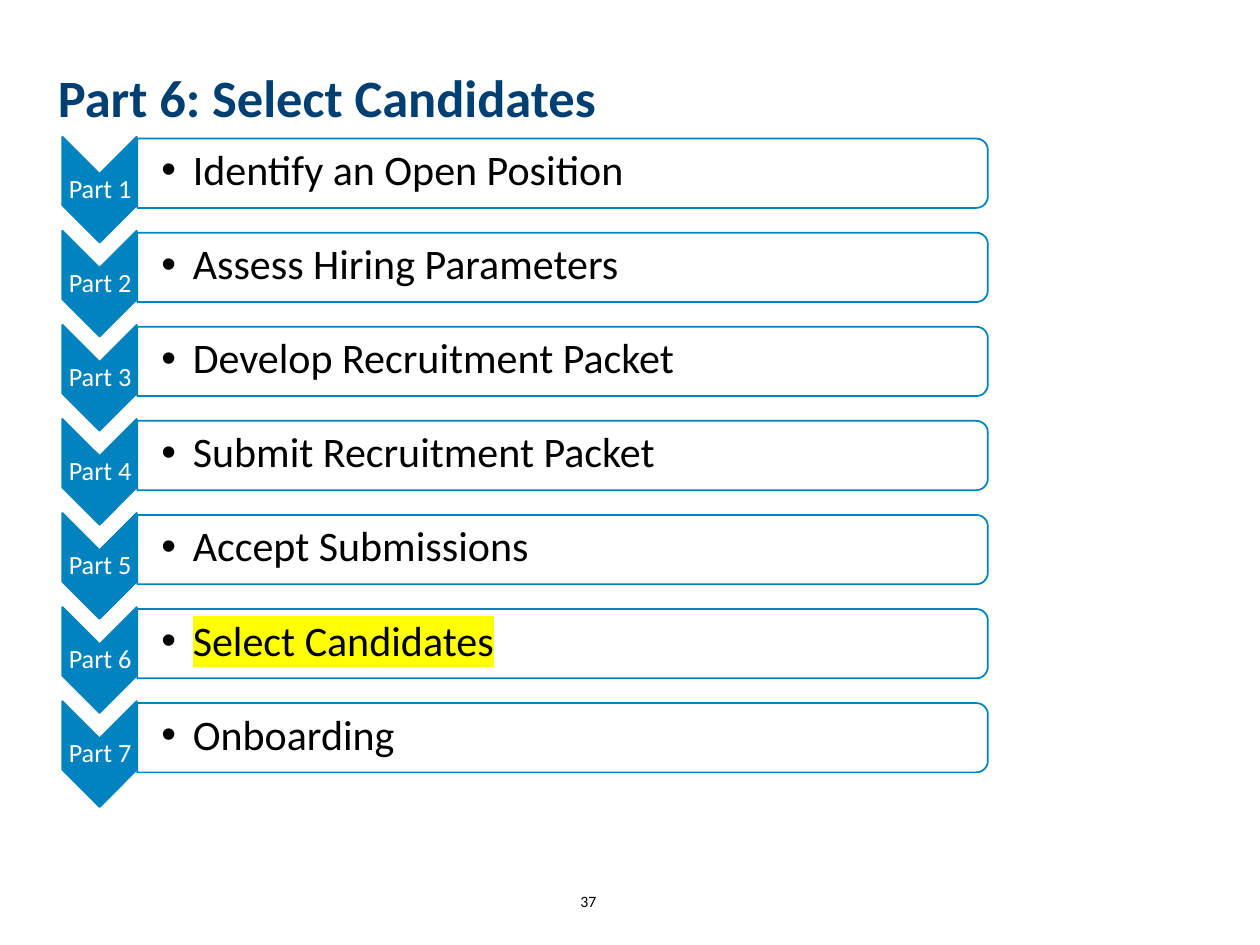
"""Build the hiring roadmap slide, with the current part highlighted."""
import pptx
import pptx.dml.color
import pptx.enum.shapes
import pptx.enum.text
import pptx.oxml
import pptx.oxml.ns
import pptx.util

Inches, Pt = pptx.util.Inches, pptx.util.Pt
SHAPES = pptx.enum.shapes.MSO_SHAPE
ALIGN = pptx.enum.text.PP_ALIGN
COLORS = {"title": "003F72", "accent": "0083BE", "panel": "FFFFFF",
          "label": "FFFFFF", "body": "000000", "highlight": "FFFF00"}

TITLE = "Part 6: Select Candidates"
PAGE_NUMBER = "37"
STEPS = ["Identify an Open Position", "Assess Hiring Parameters",
         "Develop Recruitment Packet", "Submit Recruitment Packet",
         "Accept Submissions", "Select Candidates", "Onboarding"]
CURRENT_STEP = "Select Candidates"

PITCH = (5.60 - 1.12) / (len(STEPS) - 1)
FORMATS = {
    "title": {"font": {"size": Pt(30), "bold": True},
              "paragraph": {"alignment": ALIGN.LEFT, "line_spacing": 0.9}},
    "page": {"font": {"size": Pt(9)}, "paragraph": {"alignment": ALIGN.CENTER}},
    "label": {"font": {"size": Pt(15)},
              "paragraph": {"alignment": ALIGN.CENTER, "line_spacing": 0.9}},
    "step": {"font": {"size": Pt(24)},
             "paragraph": {"alignment": ALIGN.LEFT, "line_spacing": 0.9, "level": 1}},
}


def rgb(color):
    return pptx.dml.color.RGBColor.from_string(COLORS[color])


def element(tag, **attributes):
    node = pptx.oxml.parse_xml(f"<a:{tag} {pptx.oxml.ns.nsdecls('a')}/>")
    for name, value in attributes.items():
        node.set(name, value)
    return node


def set_attributes(target, values):
    for name, value in values.items():
        setattr(target, name, value)


def write(box, text, style, color, insets=(0.1, 0.05, 0.1, 0.05), indent=None, bullet=False):
    frame = box.text_frame
    set_attributes(frame, {"word_wrap": True,
                           "auto_size": pptx.enum.text.MSO_AUTO_SIZE.NONE,
                           "vertical_anchor": pptx.enum.text.MSO_ANCHOR.MIDDLE})
    sides = ("margin_left", "margin_top", "margin_right", "margin_bottom")
    set_attributes(frame, {side: Inches(inset) for side, inset in zip(sides, insets)})
    frame.text = text
    paragraph = frame.paragraphs[0]
    properties = paragraph._p.get_or_add_pPr()
    if indent:
        for name, value in zip(("marL", "indent"), indent):
            properties.set(name, str(Inches(value)))
    if bullet:
        properties.append(element("buFont", typeface="Arial"))
        properties.append(element("buChar", char="•"))
    set_attributes(paragraph, FORMATS[style]["paragraph"])
    run = paragraph.runs[0]
    set_attributes(run.font, {"name": "Calibri", **FORMATS[style]["font"]})
    run.font.color.rgb = rgb(color)
    return run


def add_text(slide, place, *content, **options):
    return write(slide.shapes.add_textbox(*map(Inches, place)), *content, **options)


def add_turned_shape(slide, kind, place, color):
    shape = slide.shapes.add_shape(kind, *map(Inches, place))
    shape.rotation = 90
    shape.shadow.inherit = False
    shape.fill.solid()
    shape.fill.fore_color.rgb = rgb(color)
    shape.line.color.rgb = rgb("accent")
    shape.line.width = Pt(1)
    return shape


def highlight(run):
    marker = element("highlight")
    marker.append(element("srgbClr", val=COLORS["highlight"]))
    run._r.rPr.find(pptx.oxml.ns.qn("a:solidFill")).addnext(marker)


def add_step(slide, number, step):
    offset = (number - 1) * PITCH
    add_turned_shape(slide, SHAPES.CHEVRON, (0.37, 1.21 + offset, 0.84, 0.59), "accent")
    add_text(slide, (0.5, 1.38 + offset, 0.59, 0.25), f"Part {number}", "label", "label",
             insets=(0.01,) * 4)
    panel = add_turned_shape(slide, SHAPES.ROUND_2_SAME_RECTANGLE,
                             (4.19, -2 + offset, 0.55, 6.75), "panel")
    panel_color = panel.fill._xPr.find(pptx.oxml.ns.qn("a:solidFill"))[0]
    panel_color.append(element("alpha", val="90000"))
    run = add_text(slide, (1.09, 1.12 + offset, 6.72, 0.49), step, "step", "body",
                   insets=(0.19, 0.02, 0.02, 0.02), indent=(0.25, -0.25), bullet=True)
    if step == CURRENT_STEP:
        highlight(run)


def main():
    deck = pptx.Presentation()
    deck.slide_width, deck.slide_height = Inches(10), Inches(7.5)
    slide = deck.slides.add_slide(deck.slide_layouts[5])
    title = slide.shapes.title
    edges = ("left", "top", "width", "height")
    set_attributes(title, dict(zip(edges, map(Inches, (0.35, 0.37, 7.97, 0.85)))))
    write(title, TITLE, "title", "title", indent=(0.01, 0))
    add_text(slide, (4.39, 6.95, 0.56, 0.4), PAGE_NUMBER, "page", "body")
    for number, step in enumerate(STEPS, 1):
        add_step(slide, number, step)
    deck.save("out.pptx")


if __name__ == "__main__":
    main()
